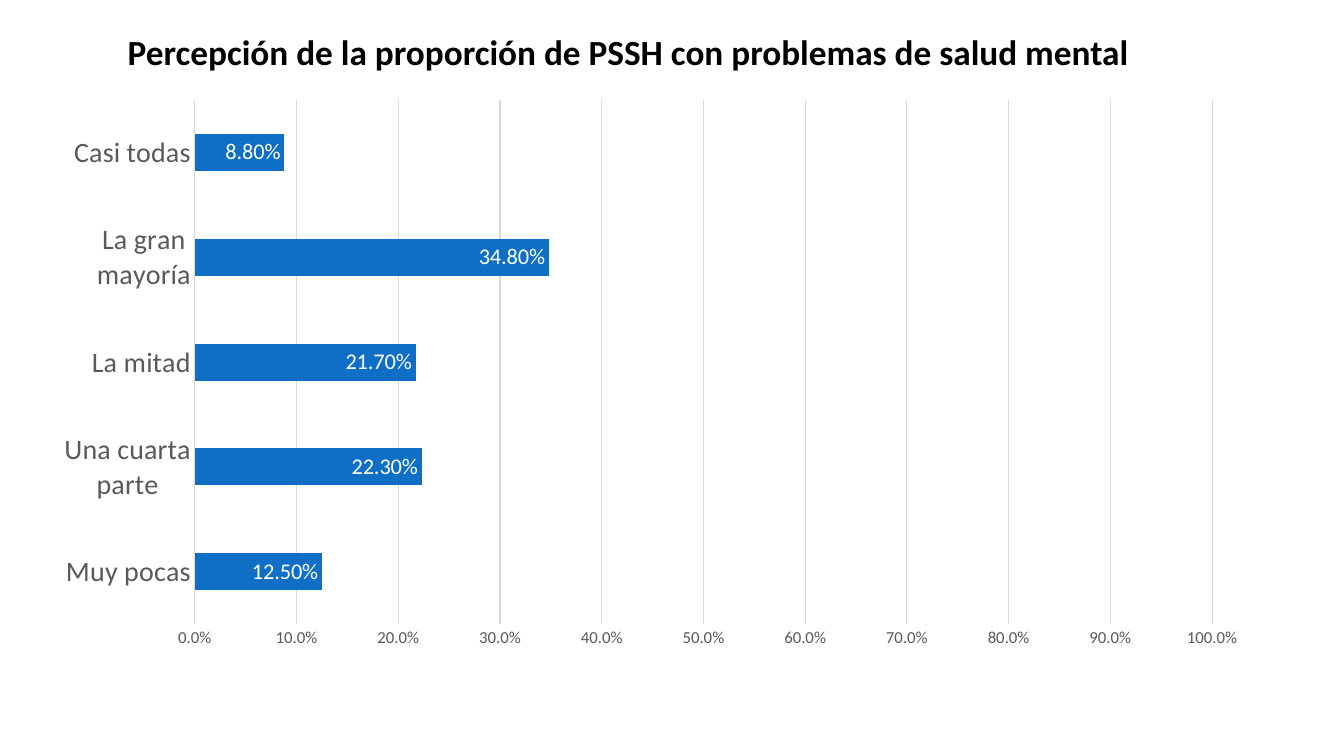
import pptx
import pptx.chart.data
import pptx.dml.color
import pptx.enum.chart
import pptx.enum.text
import pptx.oxml
import pptx.oxml.ns
import pptx.util
from dataclasses import dataclass

Pt = pptx.util.Pt
RGB = pptx.dml.color.RGBColor.from_string


@dataclass(frozen=True)
class Theme:
    font: str = "Calibri"
    title: str = "000000"
    axis_text: str = "595959"
    grid: str = "D9D9D9"
    bar: str = "0F6FC6"
    label: str = "FFFFFF"
    title_size: float = 25.2
    category_size: float = 20
    label_size: float = 16
    value_size: float = 12


THEME = Theme()
TITLE = "Percepción de la proporción de PSSH con problemas de salud mental"
SHARES = {
    "Muy pocas": 0.125,
    "Una cuarta parte": 0.223,
    "La mitad": 0.217,
    "La gran mayoría": 0.348,
    "Casi todas": 0.088,
}


def style_font(font, size, color, bold=False):
    font.name = THEME.font
    font.size = Pt(size)
    font.bold = bold
    font.color.rgb = RGB(color)


def style_line(line, color):
    line.color.rgb = RGB(color)
    line.width = Pt(0.75)


def set_plot_layout(chart, x, y, w, h):
    """Fix the inner plot area, as fractions of the chart."""
    plot_area = chart.plots[0]._element.getparent()
    for old in plot_area.findall(pptx.oxml.ns.qn("c:layout")):
        plot_area.remove(old)
    sizes = "".join(f'<c:{tag} val="{val}"/>'
                    for tag, val in zip("xywh", (x, y, w, h)))
    plot_area.insert(0, pptx.oxml.parse_xml(
        f'<c:layout {pptx.oxml.ns.nsdecls("c")}><c:manualLayout>'
        '<c:layoutTarget val="inner"/><c:xMode val="edge"/><c:yMode val="edge"/>'
        f'{sizes}</c:manualLayout></c:layout>'))


def add_title(slide, left, top, width, height):
    sp = slide.shapes.add_textbox(Pt(left), Pt(top), Pt(width), Pt(height))
    tf = sp.text_frame
    tf.word_wrap = True
    tf.vertical_anchor = pptx.enum.text.MSO_ANCHOR.MIDDLE
    tf.text = TITLE
    p = tf.paragraphs[0]
    p.line_spacing = 0.9
    style_font(p.runs[0].font, THEME.title_size, THEME.title, bold=True)


def add_share_chart(slide, left, top, width, height):
    enums = pptx.enum.chart
    data = pptx.chart.data.CategoryChartData(number_format="0.00%")
    data.categories = list(SHARES)
    data.add_series("Series 1", list(SHARES.values()))
    chart = slide.shapes.add_chart(
        enums.XL_CHART_TYPE.BAR_CLUSTERED,
        Pt(left), Pt(top), Pt(width), Pt(height), data).chart
    chart.has_legend = False
    chart.has_title = False
    chart.font.name = THEME.font
    set_plot_layout(chart, 0.124, 0.002, 0.844, 0.851)

    # Bars and their labels
    plot = chart.plots[0]
    plot.gap_width = 182
    plot.vary_by_categories = False
    fill = plot.series[0].format.fill
    fill.solid()
    fill.fore_color.rgb = RGB(THEME.bar)
    labels = plot.series[0].data_labels
    labels.show_value = True
    labels.position = enums.XL_LABEL_POSITION.INSIDE_END
    labels.number_format = "0.00%"
    labels.number_format_is_linked = False
    style_font(labels.font, THEME.label_size, THEME.label)

    # Axes
    categories, values = chart.category_axis, chart.value_axis
    for axis, size in ((categories, THEME.category_size),
                       (values, THEME.value_size)):
        axis.major_tick_mark = enums.XL_TICK_MARK.NONE
        axis.minor_tick_mark = enums.XL_TICK_MARK.NONE
        style_font(axis.tick_labels.font, size, THEME.axis_text)
    style_line(categories.format.line, THEME.grid)
    values.minimum_scale, values.maximum_scale = 0, 1
    values.major_unit = 0.1
    values.format.line.fill.background()
    style_line(values.major_gridlines.format.line, THEME.grid)
    values.tick_labels.number_format = "0.0%"
    values.tick_labels.number_format_is_linked = False


def main():
    prs = pptx.Presentation()
    prs.slide_width, prs.slide_height = Pt(960), Pt(540)
    slide = prs.slides.add_slide(prs.slide_layouts[6])
    add_share_chart(slide, 32.4, 70.6, 861, 440)
    add_title(slide, 84.2, 10.8, 792, 55.4)
    prs.save("out.pptx")


if __name__ == "__main__":
    main()
